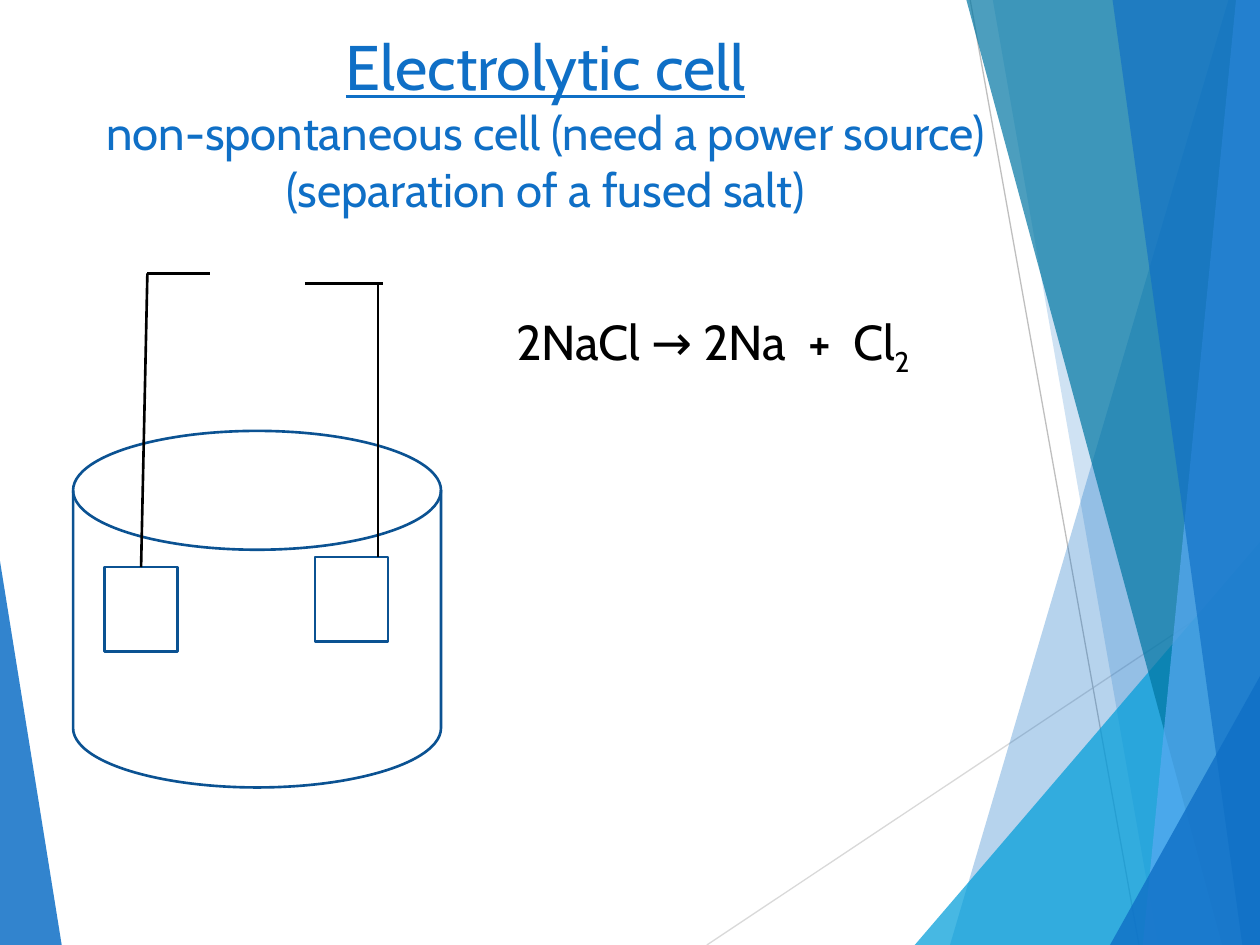
from dataclasses import dataclass

from lxml.etree import SubElement
from pptx import Presentation
from pptx.dml.color import RGBColor
from pptx.enum.shapes import MSO_CONNECTOR as Connector, MSO_SHAPE as Shape
from pptx.enum.text import MSO_ANCHOR as Anchor, MSO_AUTO_SIZE as AutoSize, PP_ALIGN as Align
from pptx.oxml.ns import qn
from pptx.util import Inches, Pt


@dataclass(frozen=True)
class Theme:
    font: str = "Cabin"
    blue: str = "0F6FC6"
    sky: str = "59AAF2"
    cyan: str = "009DD9"
    teal: str = "0076A3"
    outline: str = "0B5292"
    black: str = "000000"
    white: str = "FFFFFF"
    light_gray: str = "D9D9D9"
    gray: str = "BFBFBF"
    title_size: int = 36
    subtitle_size: int = 27
    equation_size: int = 28
    hairline: float = 0.75
    stroke: float = 1.5


THEME = Theme()
WIDTH, HEIGHT = 10, 7.5


def rgb(value):
    return RGBColor.from_string(value)


def add_facet(page, points, color, opacity):
    """Draw a translucent polygon of the background."""
    corners = [(Inches(x), Inches(y)) for x, y in points]
    builder = page.shapes.build_freeform(*corners[0], scale=1.0)
    builder.add_line_segments(corners[1:], close=True)
    facet = builder.convert_to_shape()
    facet.shadow.inherit = False
    facet.fill.solid()
    facet.fill.fore_color.rgb = rgb(color)
    facet.line.fill.background()
    color_node = facet.fill._xPr.find(qn("a:solidFill"))[0]
    SubElement(color_node, qn("a:alpha")).set("val", str(opacity * 1000))


def add_line(page, start, end, color=THEME.black, width=THEME.stroke):
    line = page.shapes.add_connector(
        Connector.STRAIGHT, *(Inches(value) for value in (*start, *end)))
    line.line.color.rgb = rgb(color)
    line.line.width = Pt(width)
    SubElement(line._element.spPr, qn("a:effectLst"))


def add_outlined(page, kind, left, top, width, height):
    shape = page.shapes.add_shape(
        kind, Inches(left), Inches(top), Inches(width), Inches(height))
    shape.shadow.inherit = False
    shape.fill.solid()
    shape.fill.fore_color.rgb = rgb(THEME.white)
    shape.line.color.rgb = rgb(THEME.outline)
    shape.line.width = Pt(THEME.stroke)


def add_text_box(page, left, top, width, height, wrap):
    box = page.shapes.add_textbox(
        Inches(left), Inches(top), Inches(width), Inches(height))
    box.text_frame.word_wrap = wrap
    box.text_frame.vertical_anchor = Anchor.TOP
    return box


def style(span, size, color):
    span.font.name = THEME.font
    span.font.size = Pt(size)
    span.font.color.rgb = rgb(color)


def add_background(page):
    right = WIDTH + 0.01
    add_facet(page, [(-0.01, 4.39), (0.49, HEIGHT), (-0.01, HEIGHT)], THEME.blue, 85)
    add_line(page, (5.61, HEIGHT), (right, 4.57), THEME.light_gray, THEME.hairline)
    add_line(page, (7.7, 0), (9.04, HEIGHT), THEME.gray, THEME.hairline)

    # Facets along the right edge: top left, bottom left, colour, opacity
    for top_x, bottom_x, color, opacity in [
        (9.75, 7.54, THEME.blue, 30),
        (7.88, 9.19, THEME.blue, 20),
        (None, 7.26, THEME.cyan, 72),
        (7.67, 9.7, THEME.teal, 70),
        (9.81, 9.07, THEME.sky, 70),
        (8.83, 9.86, THEME.blue, 65),
    ]:
        top = [(right, 4.29)] if top_x is None else [(top_x, 0), (right, 0)]
        add_facet(page, [(bottom_x, HEIGHT), *top, (right, HEIGHT)], color, opacity)
    add_facet(page, [(8.81, HEIGHT), (right, 5.35), (right, HEIGHT)], THEME.blue, 80)


def add_title(page):
    box = add_text_box(page, 0.33, 0.17, 8, 1.83, wrap=True)
    box.text_frame.text = ("Electrolytic cell\vnon-spontaneous cell (need a power source)"
                           "\v(separation of a fused salt)")
    para = box.text_frame.paragraphs[0]
    para.alignment = Align.CENTER
    heading, *details = para.runs
    style(heading, THEME.title_size, THEME.blue)
    heading.font.underline = True
    for span in details:
        style(span, THEME.subtitle_size, THEME.blue)


def add_cell(page):
    # Container and electrodes
    add_outlined(page, Shape.FLOWCHART_MAGNETIC_DISK, 0.58, 3.42, 2.92, 2.83)
    for left, top in [(0.83, 4.5), (2.5, 4.42)]:
        add_outlined(page, Shape.RECTANGLE, left, top, 0.58, 0.67)
    # Wires
    add_line(page, (1.12, 4.5), (1.17, 2.17))
    add_line(page, (3, 4.42), (3, 2.25))
    add_line(page, (1.17, 2.17), (1.67, 2.17))
    add_line(page, (2.42, 2.25), (3.04, 2.25))


def add_equation(page):
    box = add_text_box(page, 4, 2.42, 3.89, 0.57, wrap=False)
    box.text_frame.auto_size = AutoSize.SHAPE_TO_FIT_TEXT
    para = box.text_frame.paragraphs[0]
    para.text = "2NaCl → 2Na  +  Cl"
    subscript = para.add_run()
    subscript.text = "2"
    for span in para.runs:
        style(span, THEME.equation_size, THEME.black)
    subscript.font._element.set("baseline", "-25000")


def main():
    deck = Presentation()
    deck.slide_width, deck.slide_height = Inches(WIDTH), Inches(HEIGHT)
    page = deck.slides.add_slide(deck.slide_layouts[6])
    add_background(page)
    add_title(page)
    add_cell(page)
    add_equation(page)
    deck.save("out.pptx")


if __name__ == "__main__":
    main()
